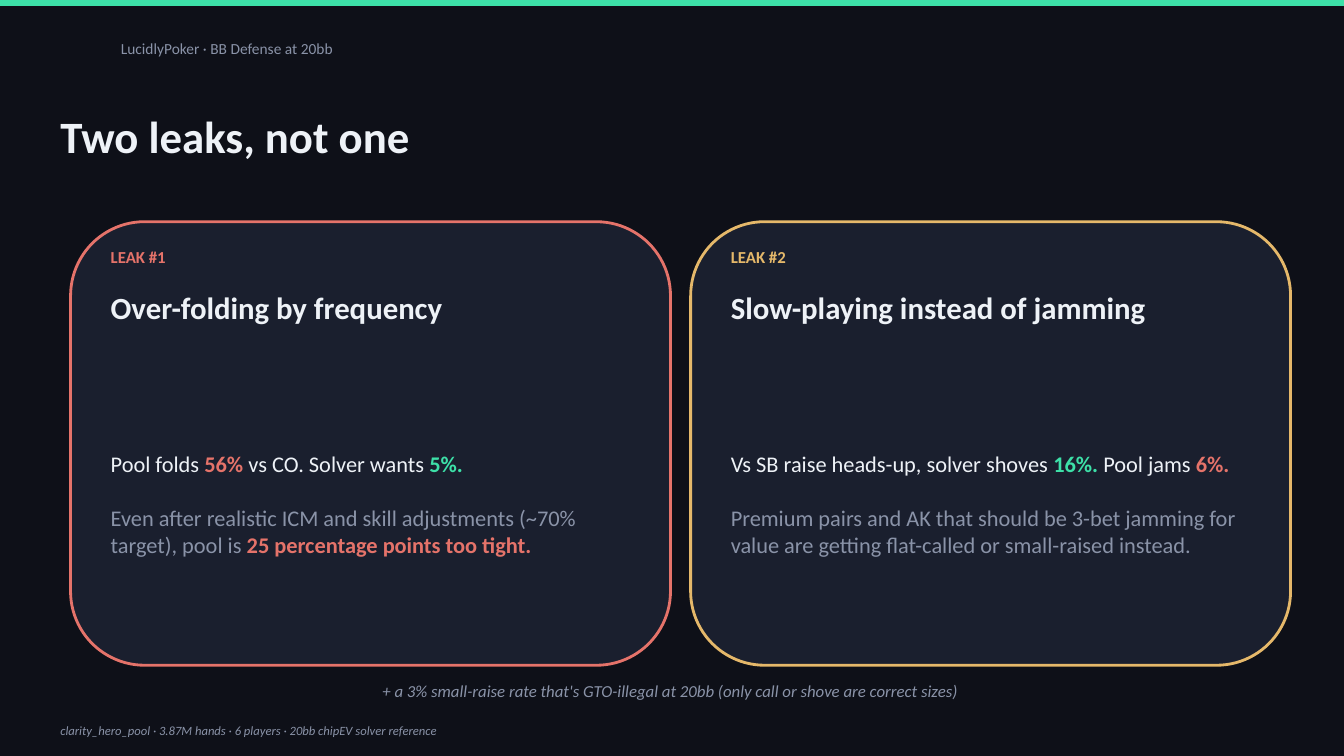
from pptx import Presentation
from pptx.dml.color import RGBColor
from pptx.enum.shapes import MSO_SHAPE as Shape
from pptx.enum.text import MSO_ANCHOR as Anchor, MSO_AUTO_SIZE as AutoSize, PP_ALIGN as Align
from pptx.util import Inches, Pt

BACKGROUND = RGBColor(0x0E, 0x10, 0x18)
PANEL = RGBColor(0x1A, 0x1F, 0x2E)
WHITE = RGBColor(0xEE, 0xF2, 0xF7)
GREY = RGBColor(0x8A, 0x93, 0xA8)
GREEN = RGBColor(0x3D, 0xE0, 0xA8)
RED = RGBColor(0xE5, 0x73, 0x6A)
GOLD = RGBColor(0xE5, 0xB8, 0x6A)

SLIDE_WIDTH = 13.33
MARGIN = 0.5
CONTENT_WIDTH = 12.3
CARD_LEFT, CARD_TOP = 0.7, 2.2
CARD_WIDTH, CARD_HEIGHT = 5.95, 4.4
CARD_GAP = 0.2

LEAKS = [
    ("LEAK #1", "Over-folding by frequency", RED, [
        [("Pool folds ", WHITE, False), ("56% ", RED, True),
         ("vs CO. Solver wants ", WHITE, False), ("5%.", GREEN, True)],
        [("Even after realistic ICM and skill adjustments (~70% target), pool is ", GREY, False),
         ("25 percentage points too tight.", RED, True)],
    ]),
    ("LEAK #2", "Slow-playing instead of jamming", GOLD, [
        [("Vs SB raise heads-up, solver shoves ", WHITE, False), ("16%. ", GREEN, True),
         ("Pool jams ", WHITE, False), ("6%.", RED, True)],
        [("Premium pairs and AK that should be 3-bet jamming for value "
          "are getting flat-called or small-raised instead.", GREY, False)],
    ]),
]


def format_font(font, size, color, bold=False, italic=False):
    font.name = "Calibri"
    font.size = Pt(size)
    font.color.rgb = color
    font.bold = bold
    font.italic = italic


def prepare_frame(text_frame):
    text_frame.word_wrap = True
    text_frame.auto_size = AutoSize.NONE
    text_frame.vertical_anchor = Anchor.MIDDLE


def add_frame(slide, left, top, width, height):
    box = slide.shapes.add_textbox(Inches(left), Inches(top), Inches(width), Inches(height))
    prepare_frame(box.text_frame)
    return box.text_frame


def add_line(slide, text, left, top, width, height, size, color,
             bold=False, italic=False, align=Align.LEFT):
    text_frame = add_frame(slide, left, top, width, height)
    text_frame.text = text
    paragraph = text_frame.paragraphs[0]
    paragraph.alignment = align
    format_font(paragraph.runs[0].font, size, color, bold, italic)


def add_panel(slide, kind, left, top, width, height, fill, line=None):
    shape = slide.shapes.add_shape(kind, Inches(left), Inches(top), Inches(width), Inches(height))
    shape.shadow.inherit = False
    shape.fill.solid()
    shape.fill.fore_color.rgb = fill
    if line is None:
        shape.line.fill.background()
    else:
        shape.line.color.rgb = line
        shape.line.width = Pt(2)


def add_header(slide):
    add_panel(slide, Shape.RECTANGLE, 0, 0, SLIDE_WIDTH, 0.06, GREEN)
    add_line(slide, "LucidlyPoker · BB Defense at 20bb", 1.1, 0.25, 8, 0.45, 11, GREY)


def add_title(slide, text, left, top, width, height):
    title = slide.shapes.title
    title.left, title.top = Inches(left), Inches(top)
    title.width, title.height = Inches(width), Inches(height)
    prepare_frame(title.text_frame)
    title.text_frame.text = text
    paragraph = title.text_frame.paragraphs[0]
    paragraph.alignment = Align.LEFT
    format_font(paragraph.runs[0].font, 32, WHITE, bold=True)


def add_card(slide, leak, left, top, width, height):
    label, heading, accent, body = leak
    text_left = left + 0.3
    add_panel(slide, Shape.ROUNDED_RECTANGLE, left, top, width, height, PANEL, accent)
    add_line(slide, label, text_left, top + 0.15, width - 0.45, 0.4, 12, accent, bold=True)
    add_line(slide, heading, text_left, top + 0.55, width - 0.45, 0.6, 22, WHITE, bold=True)
    text_frame = add_frame(slide, text_left, top + 1.35, width - 0.55, height - 1.5)
    for index, pieces in enumerate(body):
        if index:
            paragraph = text_frame.add_paragraph()
            paragraph.space_before = Pt(19.5)
        else:
            paragraph = text_frame.paragraphs[0]
        for text, color, bold in pieces:
            run = paragraph.add_run()
            run.text = text
            format_font(run.font, 16, color, bold)


def add_footer(slide, left, top, width):
    add_line(slide, "+ a 3% small-raise rate that's GTO-illegal at 20bb (only call or shove are correct sizes)",
             left, top, width, 0.4, 12, GREY, italic=True, align=Align.CENTER)
    add_line(slide, "clarity_hero_pool · 3.87M hands · 6 players · 20bb chipEV solver reference",
             left, top + 0.4, width, 0.4, 9, GREY, italic=True)


def main():
    presentation = Presentation()
    presentation.slide_width = Inches(SLIDE_WIDTH)
    presentation.slide_height = Inches(7.5)
    slide = presentation.slides.add_slide(presentation.slide_layouts[5])
    slide.background.fill.solid()
    slide.background.fill.fore_color.rgb = BACKGROUND
    add_header(slide)
    add_title(slide, "Two leaks, not one", MARGIN, 1, CONTENT_WIDTH, 0.7)
    for index, leak in enumerate(LEAKS):
        left = CARD_LEFT + index * (CARD_WIDTH + CARD_GAP)
        add_card(slide, leak, left, CARD_TOP, CARD_WIDTH, CARD_HEIGHT)
    add_footer(slide, MARGIN, 6.65, CONTENT_WIDTH)
    presentation.save("out.pptx")


if __name__ == "__main__":
    main()
